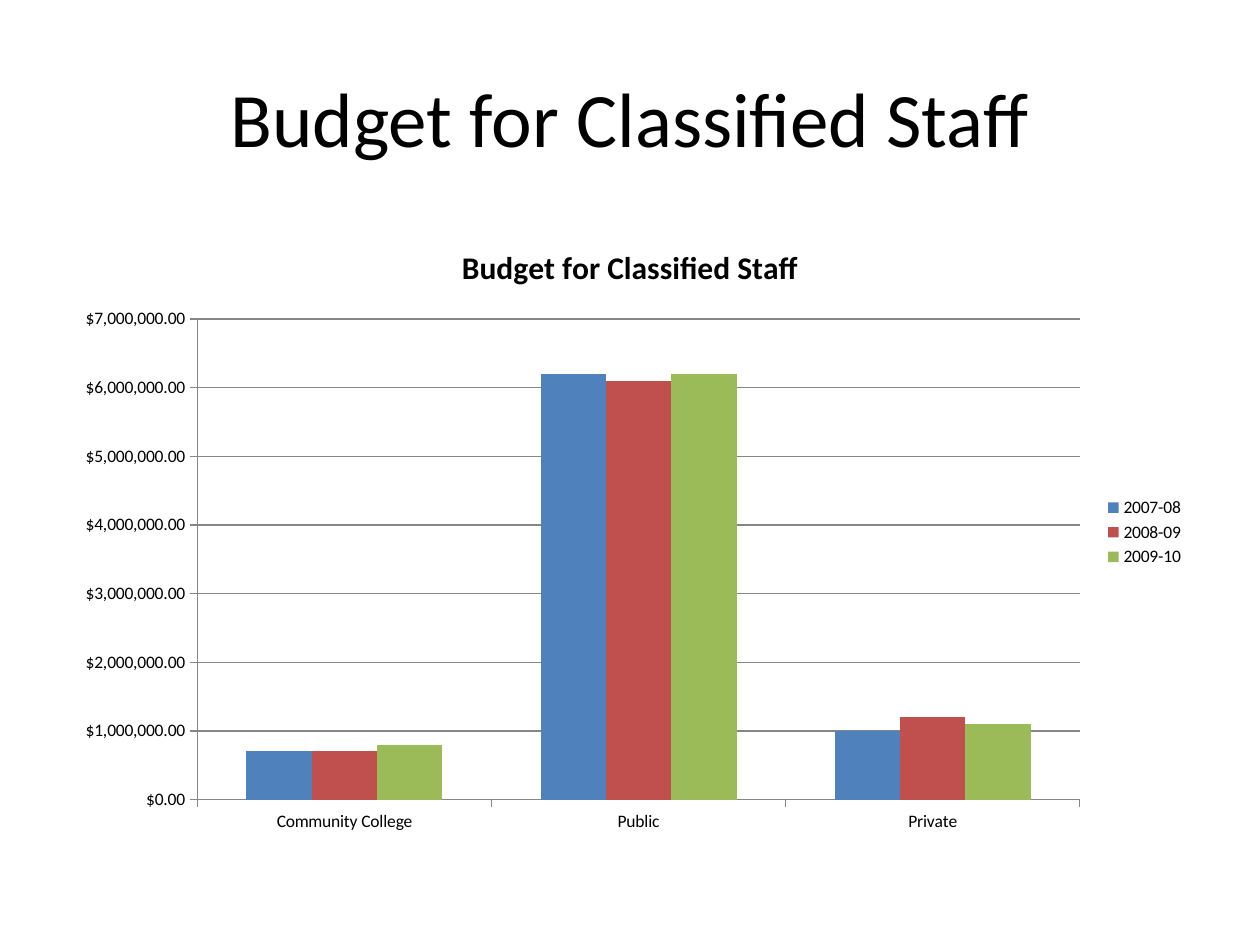
from pptx import Presentation
from pptx.chart.data import CategoryChartData
from pptx.dml.color import RGBColor
from pptx.enum.chart import XL_CHART_TYPE, XL_LEGEND_POSITION, XL_TICK_MARK
from pptx.enum.text import MSO_ANCHOR, PP_ALIGN
from pptx.util import Inches, Pt

FONT = "Calibri"
HEADING = "Budget for Classified Staff"
MONEY = '"$"#,##0.00'
CATEGORIES = ["Community College", "Public", "Private"]
BUDGETS = [
    ("2007-08", [700000, 6200000, 1000000], "4F81BD"),
    ("2008-09", [700000, 6100000, 1200000], "C0504D"),
    ("2009-10", [800000, 6200000, 1100000], "9BBB59"),
]


def color(value):
    return RGBColor.from_string(value)


def style_font(font, size, bold=False, fill="000000"):
    font.name = FONT
    font.size = Pt(size)
    font.bold = bold
    font.color.rgb = color(fill)


def style_line(line):
    line.color.rgb = color("868686")
    line.width = Pt(0.75)


def write_text(frame, text, size, bold=False, align=PP_ALIGN.CENTER):
    para = frame.paragraphs[0]
    para.alignment = align
    span = para.add_run()
    span.text = text
    style_font(span.font, size, bold)


def add_title(page, left, top, width, height):
    box = page.shapes.add_textbox(left, top, width, height)
    frame = box.text_frame
    frame.word_wrap = True
    frame.vertical_anchor = MSO_ANCHOR.MIDDLE
    write_text(frame, HEADING, size=44)


def style_axis(axis):
    axis.major_tick_mark = XL_TICK_MARK.OUTSIDE
    axis.minor_tick_mark = XL_TICK_MARK.NONE
    style_line(axis.format.line)
    style_font(axis.tick_labels.font, 10)


def add_budget_chart(page, left, top, width, height):
    data = CategoryChartData(number_format=MONEY)
    data.categories = CATEGORIES
    for name, values, _ in BUDGETS:
        data.add_series(name, values)
    chart = page.shapes.add_chart(
        XL_CHART_TYPE.COLUMN_CLUSTERED, left, top, width, height, data
    ).chart
    style_font(chart.font, 10)

    chart.has_title = True
    chart.chart_title.include_in_layout = False
    write_text(chart.chart_title.text_frame, HEADING, size=18, bold=True)

    chart.has_legend = True
    chart.legend.position = XL_LEGEND_POSITION.RIGHT
    chart.legend.include_in_layout = False
    style_font(chart.legend.font, 10)

    plot = chart.plots[0]
    plot.gap_width = 150
    plot.overlap = 0
    plot.vary_by_categories = False
    for series, (_, _, fill) in zip(plot.series, BUDGETS):
        series.invert_if_negative = False
        series.format.fill.solid()
        series.format.fill.fore_color.rgb = color(fill)

    style_axis(chart.category_axis)
    money_axis = chart.value_axis
    style_axis(money_axis)
    money_axis.minimum_scale = 0
    money_axis.maximum_scale = 7000000
    money_axis.major_unit = 1000000
    money_axis.has_major_gridlines = True
    style_line(money_axis.major_gridlines.format.line)
    money_axis.tick_labels.number_format = MONEY
    money_axis.tick_labels.number_format_is_linked = False


def main():
    deck = Presentation()
    deck.slide_width = Inches(10)
    deck.slide_height = Inches(7.5)
    page = deck.slides.add_slide(deck.slide_layouts[6])
    add_title(page, Inches(0.5), Inches(0.3), Inches(9), Inches(1.25))
    add_budget_chart(page, Inches(0.5), Inches(1.75), Inches(9), Inches(4.95))
    deck.save("out.pptx")


if __name__ == "__main__":
    main()
